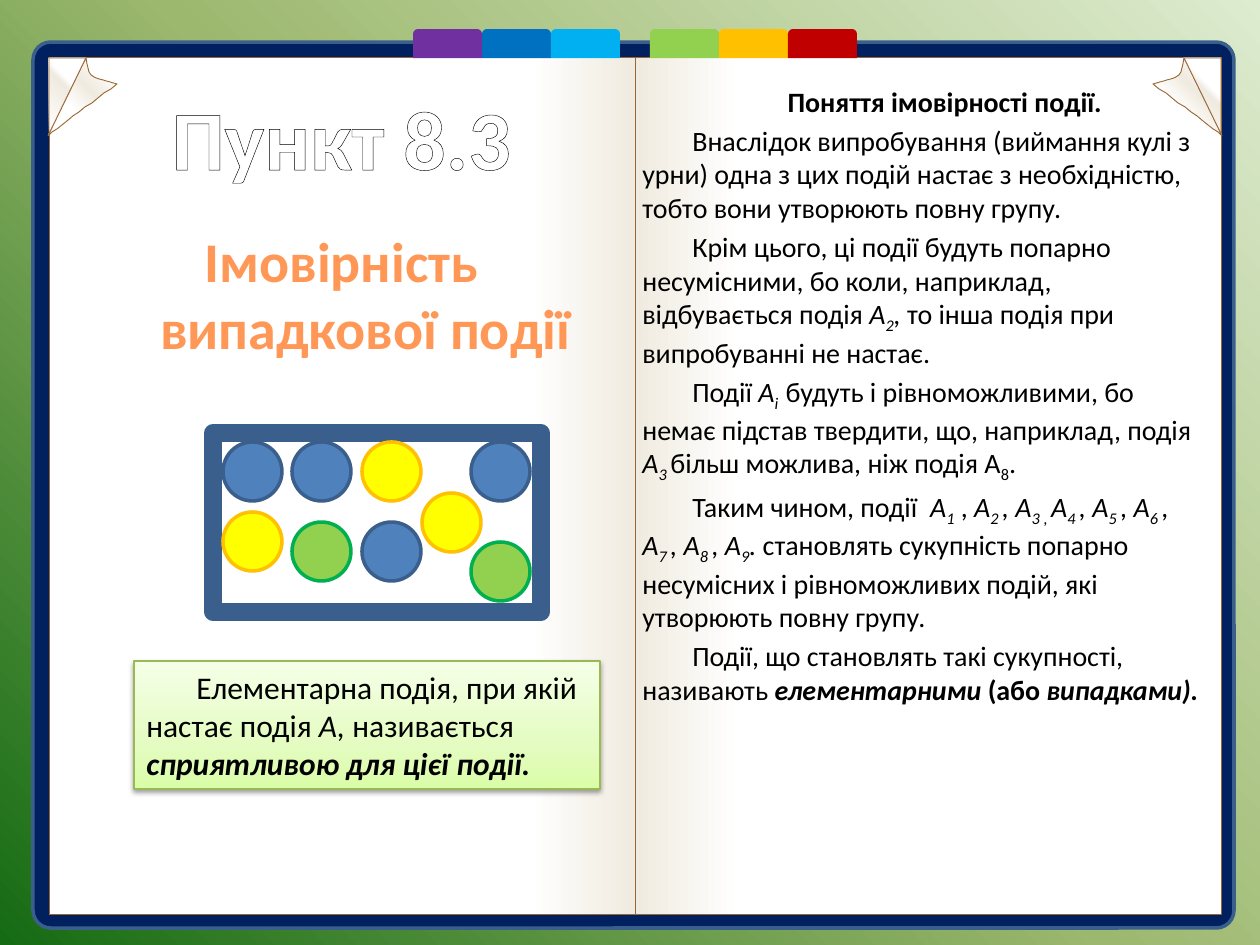
from lxml.etree import SubElement
from pptx import Presentation
from pptx.dml.color import RGBColor
from pptx.enum.shapes import MSO_SHAPE
from pptx.enum.text import PP_ALIGN
from pptx.oxml.ns import qn
from pptx.util import Pt

PX = 914400 / 126
WIDE, HIGH = 1260, 945
MID = 635

THEME = {
    "font": "Calibri", "ink": "000000", "white": "FFFFFF",
    "cover": "002060", "edge": "3A5F8C", "sepia": "996633", "lime": "98B955",
    "title": 48, "head": 32, "note": 18, "body": 16,
    "back": ([(0, "DDEBCF"), (50, "9CB86E"), (100, "156B13")], 135),
    "page": [(0, "FFFFFF"), (82, "FFFFFF"), (100, "F0EBE0")],
    "under": ([(0, "FFFFFF"), (57, "F0EBE0"), (65, "FFFFFF")], 315),
    "curl": ([(12, "FFFFFF"), (40, "F0EBE0"), (65, "FFFFFF")], 135),
    "mint": ([(0, "DAFDA7"), (35, "E4FCC2"), (100, "F5FFE7")], 270),
    "glow": ([(0, "9D4700"), (78, "FF9856"), (100, "FFF5F1")], 90),
}
BALLS = {"blue": ("4F81BD", "3A5F8C"), "gold": ("FFFF00", "FFC000"),
         "green": ("92D050", "00B050")}

TITLE = "Пункт 8.3"
HEAD = "Імовірність випадкової події"
TABS = [(413, ["7030A0", "0070C0", "00B0F0"]),
        (650, ["92D050", "FFC000", "C00000"])]
SPOTS = [("blue", 362, 522), ("blue", 292, 442), ("blue", 223, 442),
         ("blue", 471, 442), ("gold", 422, 493), ("gold", 223, 512),
         ("gold", 362, 442), ("green", 471, 542), ("green", 292, 522)]

# Run styles: b bold, i italic, s subscript
NOTE = [("Елементарна подія, при якій настає подія ", ""), ("А, ", "i"),
        ("називається ", ""), ("сприятливою для цієї події.", "bi")]
BODY = [
    [("Поняття імовірності події. ", "b")],
    [("Внаслідок випробування (виймання кулі з урни) одна з цих подій настає "
      "з необхідністю, тобто вони утворюють повну групу.", "")],
    [("Крім цього, ці події будуть попарно несумісними, бо коли, наприклад, "
      "відбувається подія ", ""), ("А", "i"), ("2", "is"), (", ", "i"),
     ("то інша подія при випробуванні не настає.", "")],
    [("Події ", ""), ("A", "i"), ("і  ", "is"),
     ("будуть і рівноможливими, бо немає підстав твердити, що, наприклад, "
      "подія ", ""), ("А", "i"), ("3 ", "is"),
     ("більш можлива, ніж подія А", ""), ("8", "s"), (".", "")],
    [("Таким чином, події  ", ""), ("A", "i"), ("1", "is"), (" ,", ""),
     (" A", "i"), ("2 ", "is"), (", А", "i"), ("3", "is"), (" , ", "s"),
     ("А", "i"), ("4 ", "is"), (", А", "i"), ("5 ", "is"), (", А", "i"),
     ("6 ", "is"), (", А", "i"), ("7 ", "is"), (", А", "i"), ("8 ", "is"),
     (", А", "i"), ("9", "is"), (". ", "i"),
     ("становлять сукупність попарно несумісних і рівноможливих подій, які "
      "утворюють повну групу.", "")],
    [("Події, що становлять такі сукупності, називають ", ""),
     ("елементарними ", "bi"), ("(або ", "b"), ("випадками).", "bi")],
]


def px(*vals):
    return [round(v * PX) for v in vals]


def rgb(name):
    return RGBColor.from_string(THEME.get(name, name))


def blend(fill, host, stops, angle):
    """Give fill, whose XML lies inside host, a linear gradient."""
    fill.gradient()
    grad = host.find(".//" + qn("a:gradFill"))
    rail = grad.find(qn("a:gsLst"))
    for old in list(rail):
        rail.remove(old)
    for pos, hue in stops:
        stop = SubElement(rail, qn("a:gs"), pos=str(pos * 1000))
        SubElement(stop, qn("a:srgbClr"), val=hue)
    grad.find(qn("a:lin")).set("ang", str(angle * 60000))


def paint(shape, fill=None, line=None, width=0.5):
    shape.shadow.inherit = False
    if fill is None:
        shape.fill.background()
    elif isinstance(fill, tuple):
        blend(shape.fill, shape.element.spPr, *fill)
    else:
        shape.fill.solid()
        shape.fill.fore_color.rgb = rgb(fill)
    if line:
        shape.line.color.rgb = rgb(line)
        shape.line.width = Pt(width)
    else:
        shape.line.fill.background()
    return shape


def draw(kind, box, *look):
    return paint(slide.shapes.add_shape(kind, *px(*box)), *look)


def outline(points, look):
    pen = slide.shapes.build_freeform(*points[0], scale=PX)
    pen.add_line_segments(points[1:], close=True)
    paint(pen.convert_to_shape(), look, "sepia")


def curve(a, b, c, d, steps=12):
    """Points along a cubic Bezier curve."""
    for n in range(steps + 1):
        t = n / steps
        u = 1 - t
        yield tuple(round(u**3 * p + 3 * u * u * t * q + 3 * u * t * t * r + t**3 * s)
                    for p, q, r, s in zip(a, b, c, d))


def corners(points, look):
    """Draw a page corner on the right and its mirror on the left."""
    outline(points, look)
    outline([(2 * MID - x, y) for x, y in points], look)


def write(para, runs, size, align=PP_ALIGN.LEFT, left=0, indent=50, gap=0):
    para.alignment = align
    para.space_before = Pt(gap)
    props = para._p.get_or_add_pPr()
    for key, val in zip(("marL", "indent"), px(left, indent)):
        props.set(key, str(val))
    for text, style in runs:
        run = para.add_run()
        run.text = text
        look = {"name": THEME["font"], "size": Pt(THEME[size]),
                "bold": "b" in style, "italic": "i" in style}
        for key, val in look.items():
            setattr(run.font, key, val)
        run.font.color.rgb = rgb("ink")
        if "s" in style:
            run.font._element.set("baseline", "-25000")
    return run


def textbox(*box):
    frame = slide.shapes.add_textbox(*px(*box)).text_frame
    frame.word_wrap = True
    return frame


deck = Presentation()
deck.slide_width, deck.slide_height = px(WIDE, HIGH)
slide = deck.slides.add_slide(deck.slide_layouts[5])
blend(slide.background.fill, slide.element, *THEME["back"])

# Open book
cover = draw(MSO_SHAPE.ROUNDED_RECTANGLE, (33, 42, 1201, 886), "cover", "edge", 2)
cover.adjustments[0] = 0.02
for x, angle in ((MID - 586, 0), (MID, 180)):
    draw(MSO_SHAPE.RECTANGLE, (x, 58, 586, 857), (THEME["page"], angle), "sepia")
corners([(1184, 58), (1221, 134), (1221, 58)], THEME["under"])

# Title
title = slide.shapes.title
title.element.getparent().append(title.element)
title.left, title.top, title.width, title.height = px(63, 78, 557, 117)
run = write(title.text_frame.paragraphs[0], [(TITLE, "b")], "title",
            PP_ALIGN.CENTER, indent=0)
run.font.color.rgb = rgb("white")
rim = SubElement(run.font._element, qn("a:ln"), w=str(Pt(0.75)))
SubElement(SubElement(rim, qn("a:solidFill")), qn("a:srgbClr"), val=THEME["ink"])
run.font._element.insert(0, rim)

# Right page text
frame = textbox(630, 78, 586, 808)
for n, runs in enumerate(BODY):
    para = frame.add_paragraph() if n else frame.paragraphs[0]
    write(para, runs, "body", PP_ALIGN.LEFT if n else PP_ALIGN.CENTER, gap=3.2)

for start, hues in TABS:
    for n, hue in enumerate(hues):
        draw(MSO_SHAPE.ROUND_2_SAME_RECTANGLE, (start + 69 * n, 29, 69, 29), hue)

# Left page heading
para = textbox(63, 220, 557, 665).paragraphs[0]
run = write(para, [(HEAD, "b")], "head", PP_ALIGN.CENTER, 48, -48, 6.4)
blend(run.font.fill, run.font._element, *THEME["glow"])

corners([*curve((1153, 84), (1178, 103), (1206, 122), (1222, 136)),
         *curve((1184, 58), (1183, 83), (1168, 78), (1153, 84))], THEME["curl"])

# Note with a soft shadow
note = draw(MSO_SHAPE.RECTANGLE, (134, 661, 466, 128), THEME["mint"], "lime", 0.75)
note.text_frame.word_wrap = True
write(note.text_frame.paragraphs[0], NOTE, "note")
shade = SubElement(note.element.spPr.find(qn("a:effectLst")), qn("a:outerShdw"),
                   blurRad=str(Pt(3.1)), dist=str(Pt(1.6)), dir="5400000",
                   rotWithShape="0")
hue = SubElement(shade, qn("a:srgbClr"), val=THEME["ink"])
SubElement(hue, qn("a:alpha"), val="38000")

# Urn with balls
draw(MSO_SHAPE.RECTANGLE, (213, 433, 328, 179), None, "edge", 10)
for kind, x, y in SPOTS:
    draw(MSO_SHAPE.OVAL, (x, y, 59, 59), *BALLS[kind], 2)

deck.save("out.pptx")
